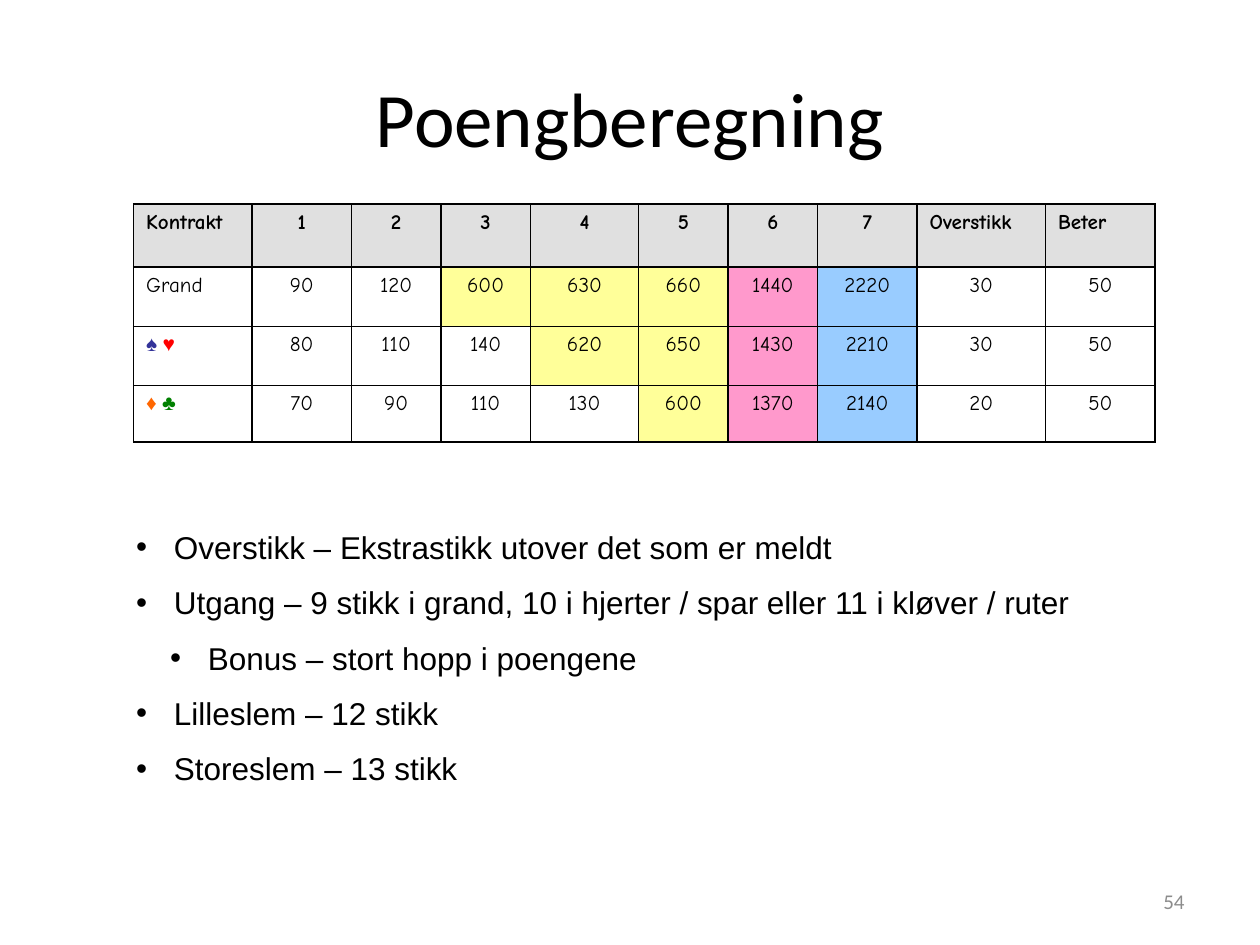
import pptx
import pptx.dml.color
import pptx.enum.text
import pptx.oxml
import pptx.oxml.ns
import pptx.util

Inches = pptx.util.Inches
Align = pptx.enum.text.PP_ALIGN
Anchor = pptx.enum.text.MSO_ANCHOR


def color(hex_string):
    return pptx.dml.color.RGBColor.from_string(hex_string)


def add_run(paragraph, text, size, font, hex_string="000000", bold=False):
    run = paragraph.add_run()
    run.text = text
    run.font.size = pptx.util.Pt(size)
    run.font.name = font
    run.font.bold = bold
    run.font.color.rgb = color(hex_string)


presentation = pptx.Presentation()
presentation.slide_width = Inches(10)
presentation.slide_height = Inches(7.5)
slide = presentation.slides.add_slide(presentation.slide_layouts[1])
title, body = slide.placeholders

# Title
title.left, title.top = Inches(0.5), Inches(0.3)
title.width, title.height = Inches(9), Inches(1.25)
title.text_frame.vertical_anchor = Anchor.MIDDLE
paragraph = title.text_frame.paragraphs[0]
paragraph.alignment = Align.CENTER
add_run(paragraph, "Poengberegning", 44, "Calibri")

# Score table: a cell holds a number, a text or a list of coloured suits
score_rows = [
    ["Kontrakt", "1", "2", "3", "4", "5", "6", "7", "Overstikk", "Beter"],
    ["Grand", 90, 120, 600, 630, 660, 1440, 2220, 30, 50],
    [[("♠ ", "333399"), ("♥", "FF0000")], 80, 110, 140, 620, 650, 1430, 2210, 30, 50],
    [[("♦ ", "FF6600"), ("♣", "008000")], 70, 90, 110, 130, 600, 1370, 2140, 20, 50],
]
column_widths = [0.94, 0.79, 0.71, 0.71, 0.86, 0.71, 0.71, 0.79, 1.02, 0.87]
row_heights = [0.5, 0.47, 0.47, 0.45]
bonus_fills = [(2000, "99CCFF"), (1000, "FF99CC"), (600, "FFFF99")]

table = slide.shapes.add_table(
    len(row_heights), len(column_widths), Inches(1.06), Inches(1.62),
    Inches(sum(column_widths)), Inches(sum(row_heights))).table
table.first_row = False
table.horz_banding = False
for column, width in zip(table.columns, column_widths):
    column.width = Inches(width)
for row, height in zip(table.rows, row_heights):
    row.height = Inches(height)

for row_index, values in enumerate(score_rows):
    header = row_index == 0
    for column_index, value in enumerate(values):
        cell = table.cell(row_index, column_index)
        properties = cell._tc.get_or_add_tcPr()
        for side in ("lnL", "lnR", "lnT", "lnB"):
            properties.append(pptx.oxml.parse_xml(
                f'<a:{side} {pptx.oxml.ns.nsdecls("a")} w="12700"><a:solidFill>'
                f'<a:srgbClr val="000000"/></a:solidFill></a:{side}>'))

        fill = "E0E0E0" if header else None
        if isinstance(value, int):
            fill = next((shade for limit, shade in bonus_fills if value >= limit), None)
        if fill:
            cell.fill.solid()
            cell.fill.fore_color.rgb = color(fill)
        else:
            cell.fill.background()

        paragraph = cell.text_frame.paragraphs[0]
        if isinstance(value, list):
            for suit, suit_color in value:
                add_run(paragraph, suit, 12, "Times New Roman", suit_color)
        else:
            add_run(paragraph, str(value), 12, "Comic Neue", bold=header)
        if 1 <= column_index <= 7 or isinstance(value, int):
            paragraph.alignment = Align.CENTER

# Explanations
explanations = [
    (0, "Overstikk – Ekstrastikk utover det som er meldt"),
    (0, "Utgang – 9 stikk i grand, 10 i hjerter / spar eller 11 i kløver / ruter"),
    (1, "Bonus – stort hopp i poengene"),
    (0, "Lilleslem – 12 stikk"),
    (0, "Storeslem – 13 stikk"),
]
body.left, body.top = Inches(0.98), Inches(4.14)
body.width, body.height = Inches(8.19), Inches(2.21)
frame = body.text_frame
frame.auto_size = pptx.enum.text.MSO_AUTO_SIZE.NONE
for index, (level, text) in enumerate(explanations):
    paragraph = frame.add_paragraph() if index else frame.paragraphs[0]
    properties = paragraph._p.get_or_add_pPr()
    properties.set("marL", str(Inches(0.3 + 0.27 * level)))
    properties.set("indent", str(Inches(-0.3)))
    properties.append(pptx.oxml.parse_xml(
        f'<a:buChar {pptx.oxml.ns.nsdecls("a")} char="•"/>'))
    paragraph.level = level
    paragraph.space_before = pptx.util.Pt(10 if index else 0)
    add_run(paragraph, text, 18, "Arial")

# Slide number
number_box = slide.shapes.add_textbox(Inches(7.17), Inches(6.95), Inches(2.33), Inches(0.4))
number_box.text_frame.word_wrap = True
number_box.text_frame.vertical_anchor = Anchor.MIDDLE
paragraph = number_box.text_frame.paragraphs[0]
paragraph.alignment = Align.RIGHT
add_run(paragraph, "54", 12, "Calibri", "8C8C8C")

presentation.save("out.pptx")
